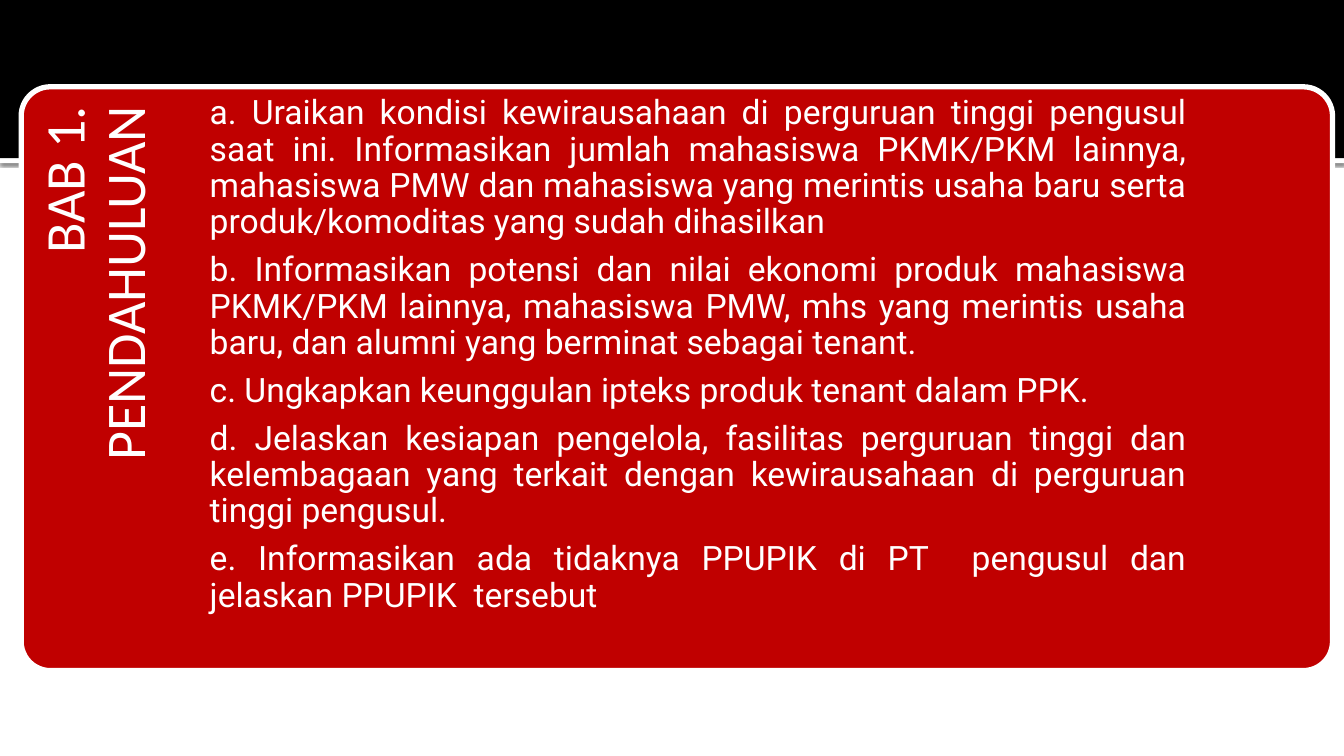
from lxml import etree
from pptx import Presentation
from pptx.dml.color import RGBColor
from pptx.enum import shapes, text
from pptx.oxml import ns
from pptx.util import Pt


def add_panel(kind, left, top, width, height, color):
    sp = slide.shapes.add_shape(kind, Pt(left), Pt(top), Pt(width), Pt(height))
    sp.shadow.inherit = False
    sp.fill.solid()
    sp.fill.fore_color.rgb = RGBColor.from_string(color)
    sp.line.fill.background()
    return sp


def add_text(box, insets, paragraphs, font, size, align):
    """Add a white text box; insets are left, top, right, bottom."""
    sp = slide.shapes.add_textbox(*[Pt(v) for v in box])
    tf = sp.text_frame
    tf.word_wrap = True
    tf.vertical_anchor = text.MSO_ANCHOR.TOP
    tf.margin_left, tf.margin_top, tf.margin_right, tf.margin_bottom = map(Pt, insets)
    tf.text = "\n".join(paragraphs)
    for p in tf.paragraphs:
        p.alignment = align
        p.line_spacing = 0.9
        p.space_after = Pt(0.35 * size)
        p.font.name = font
        p.font.size = Pt(size)
        p.font.color.rgb = RGBColor.from_string("FFFFFF")
    return sp


WIDTH, HEIGHT = 960, 540
BAND_HEIGHT = 113
CARD_TOP, CARD_HEIGHT = 62, 417

prs = Presentation()
prs.slide_width, prs.slide_height = Pt(WIDTH), Pt(HEIGHT)
slide = prs.slides.add_slide(prs.slide_layouts[6])

# Header band with a shadowed white rule beneath it
rule = add_panel(shapes.MSO_SHAPE.RECTANGLE, 0, BAND_HEIGHT, WIDTH, 3.6, "FFFFFF")
effects = rule._element.spPr.find(ns.qn("a:effectLst"))
shadow = etree.SubElement(effects, ns.qn("a:outerShdw"), blurRad=str(Pt(2.5)),
                          dist=str(Pt(0.8)), dir="5400000", rotWithShape="0")
shadow_color = etree.SubElement(shadow, ns.qn("a:srgbClr"), val="000000")
etree.SubElement(shadow_color, ns.qn("a:alpha"), val="60000")
add_panel(shapes.MSO_SHAPE.RECTANGLE, 0, 0, WIDTH, BAND_HEIGHT, "000000")

# Red card
card = add_panel(shapes.MSO_SHAPE.ROUNDED_RECTANGLE, 15.1, CARD_TOP, 936.7, CARD_HEIGHT, "C00000")
card.adjustments[0] = 0.05
card.line.color.rgb = RGBColor.from_string("FFFFFF")
card.line.width = Pt(3.78)

# Chapter title, reading upwards
title = add_text((-61.9, 139, 341.3, 187.2), (0, 10.8, 13.7, 0),
                 ["BAB 1. PENDAHULUAN"], "Calibri", 40, text.PP_ALIGN.RIGHT)
title.rotation = 270

points = [
    "a. Uraikan kondisi kewirausahaan di perguruan tinggi pengusul saat ini. "
    "Informasikan jumlah mahasiswa PKMK/PKM lainnya, mahasiswa PMW dan mahasiswa "
    "yang merintis usaha baru serta produk/komoditas yang sudah dihasilkan",
    "b. Informasikan potensi dan nilai ekonomi produk mahasiswa PKMK/PKM lainnya, "
    "mahasiswa PMW, mhs yang merintis usaha baru, dan alumni yang berminat sebagai tenant.",
    "c. Ungkapkan keunggulan ipteks produk tenant dalam PPK.",
    "d. Jelaskan kesiapan pengelola, fasilitas perguruan tinggi dan kelembagaan "
    "yang terkait dengan kewirausahaan di perguruan tinggi pengusul.",
    "e. Informasikan ada tidaknya PPUPIK di PT  pengusul dan jelaskan PPUPIK  tersebut",
]
add_text((149.8, CARD_TOP, 697.7, CARD_HEIGHT), (0, 6.5, 0, 0),
         points, "Roboto", 24, text.PP_ALIGN.JUSTIFY)

prs.save("out.pptx")
